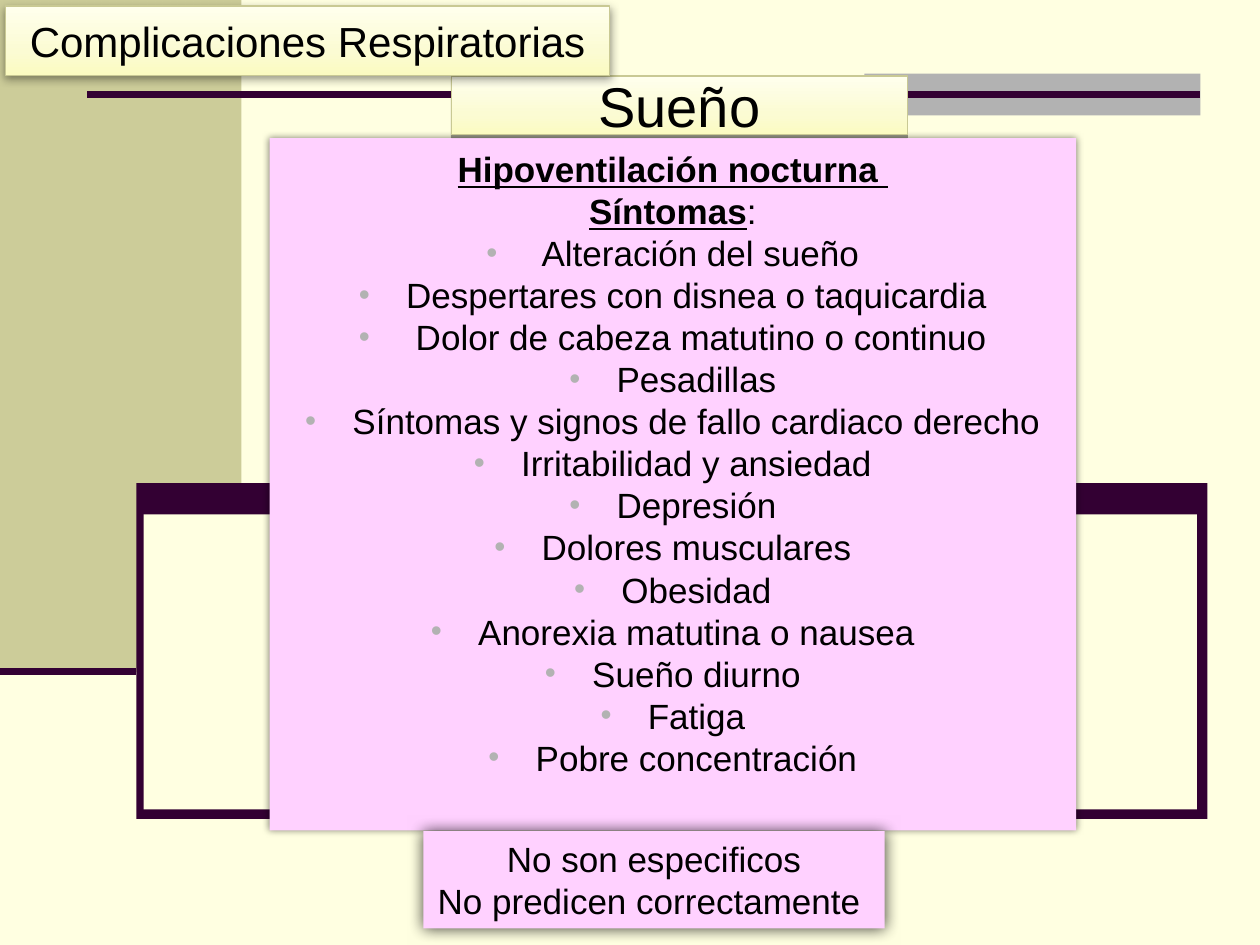
from copy import deepcopy

from lxml import etree
from pptx import Presentation
from pptx.dml.color import RGBColor
from pptx.enum.shapes import MSO_CONNECTOR, MSO_SHAPE
from pptx.enum.text import MSO_ANCHOR, PP_ALIGN
from pptx.oxml.ns import qn
from pptx.util import Pt

RECT = MSO_SHAPE.RECTANGLE
STRAIGHT = MSO_CONNECTOR.STRAIGHT
CENTER = PP_ALIGN.CENTER
TOP, MIDDLE = MSO_ANCHOR.TOP, MSO_ANCHOR.MIDDLE

CREAM = RGBColor(0xFF, 0xFF, 0xE1)
OLIVE = RGBColor(0xCC, 0xCC, 0x99)
PLUM = RGBColor(0x33, 0x00, 0x33)
GREY = RGBColor(0xB2, 0xB2, 0xB2)
PINK = RGBColor(0xFF, 0xD1, 0xFF)
BLACK = RGBColor(0x00, 0x00, 0x00)
EDGE = RGBColor(0xC9, 0xC9, 0x94)
GRADIENT = [(0, RGBColor(0xFF, 0xFF, 0xED)), (0.65, RGBColor(0xFB, 0xFB, 0xD3)),
            (1, RGBColor(0xFB, 0xFB, 0xC1))]


def add_run(p, text, size, strong=False):
    r = p.add_run()
    r.text = text
    r.font.name = "Arial"
    r.font.size = Pt(size)
    r.font.color.rgb = BLACK
    r.font.bold = r.font.underline = strong


def add_shadow(sp, blur, dist, alpha):
    sp.shadow.inherit = False
    effects = sp._element.spPr.find(qn("a:effectLst"))
    shadow = etree.SubElement(effects, qn("a:outerShdw"), blurRad=str(Pt(blur)),
                              dist=str(Pt(dist)), dir="5400000", algn="ctr", rotWithShape="0")
    color = etree.SubElement(shadow, qn("a:srgbClr"), val=str(BLACK))
    etree.SubElement(color, qn("a:alpha"), val=str(alpha * 1000))


prs = Presentation()
prs.slide_width, prs.slide_height = Pt(720), Pt(540)
s = prs.slides.add_slide(prs.slide_layouts[6])
s.background.fill.solid()
s.background.fill.fore_color.rgb = CREAM

# Background blocks; the last one is the grey bar
for x, y, w, h, color in [
    (0, 0, 138, 384, OLIVE),
    (78, 276, 612, 192, PLUM),
    (82, 294, 602, 168.5, CREAM),
    (494, 42, 192, 24, GREY),
]:
    bar = s.shapes.add_shape(RECT, Pt(x), Pt(y), Pt(w), Pt(h))
    bar.shadow.inherit = False
    bar.fill.solid()
    bar.fill.fore_color.rgb = color
    bar.line.fill.background()

# Rules, the upper one ending at the grey bar
for x1, x2, y, width in [(0, 78, 384, 4), (50, 686, 54, 3.5)]:
    rule = s.shapes.add_connector(STRAIGHT, Pt(x1), Pt(y), Pt(x2), Pt(y))
    rule.line.color.rgb = PLUM
    rule.line.width = Pt(width)
    etree.SubElement(rule._element.spPr, qn("a:effectLst"))
rule.end_connect(bar, 3)

# Pink panels: each paragraph is (runs, bulleted), each run (text, strong)
symptoms = [
    " Alteración del sueño", "Despertares con disnea o taquicardia",
    " Dolor de cabeza matutino o continuo", "Pesadillas",
    "Síntomas y signos de fallo cardiaco derecho", "Irritabilidad y ansiedad",
    "Depresión", "Dolores musculares", "Obesidad", "Anorexia matutina o nausea",
    "Sueño diurno", "Fatiga", "Pobre concentración",
]
symptom_lines = [
    ([("Hipoventilación nocturna ", True)], False),
    ([("Síntomas", True), (":", False)], False),
] + [([(text, False)], True) for text in symptoms]
note_lines = [([(text, False)], False)
              for text in ("No son especificos", "No predicen correctamente ")]

for x, y, w, h, anchor, wrap, blur, alpha, lines in [
    (154, 79, 461, 395.5, TOP, True, 4, 50, symptom_lines),
    (242, 475, 263.5, 55.5, MIDDLE, False, 9, 75, note_lines),
]:
    sp = s.shapes.add_shape(RECT, Pt(x), Pt(y), Pt(w), Pt(h))
    sp.fill.solid()
    sp.fill.fore_color.rgb = PINK
    sp.line.fill.background()
    add_shadow(sp, blur, 0, alpha)
    tf = sp.text_frame
    tf.word_wrap = wrap
    tf.vertical_anchor = anchor
    tf.margin_top = tf.margin_bottom = Pt(5.5)
    for i, (runs, bulleted) in enumerate(lines):
        p = tf.add_paragraph() if i else tf.paragraphs[0]
        p.alignment = CENTER
        pPr = p._p.get_or_add_pPr()
        pPr.set("marL", str(Pt(27)))
        pPr.set("indent", str(-Pt(27)))
        if bulleted:
            color = etree.SubElement(pPr, qn("a:buClr"))
            etree.SubElement(color, qn("a:srgbClr"), val=str(GREY))
            etree.SubElement(pPr, qn("a:buSzPct"), val="90000")
            etree.SubElement(pPr, qn("a:buFont"), typeface="Arial")
            etree.SubElement(pPr, qn("a:buChar"), char="•")
        for text, strong in runs:
            add_run(p, text, 20, strong)

# Gradient title plates
for x, y, w, h, blur, size, text in [
    (258, 43.5, 260.5, 33.5, 0, 32, "Sueño"),
    (3, 3.5, 345.5, 39.5, 5, 24, "Complicaciones Respiratorias"),
]:
    sp = s.shapes.add_shape(RECT, Pt(x), Pt(y), Pt(w), Pt(h))
    sp.fill.gradient()
    sp.fill.gradient_angle = 270
    stop_list = sp._element.spPr.find(".//" + qn("a:gsLst"))
    stop_list.append(deepcopy(stop_list[-1]))
    for stop, (position, color) in zip(sp.fill.gradient_stops, GRADIENT):
        stop.position = position
        stop.color.rgb = color
    sp.line.color.rgb = EDGE
    sp.line.width = Pt(0.75)
    add_shadow(sp, blur, 1.6, 38)
    tf = sp.text_frame
    tf.word_wrap = True
    tf.vertical_anchor = MIDDLE
    p = tf.paragraphs[0]
    p.alignment = CENTER
    add_run(p, text, size)

prs.save("out.pptx")
